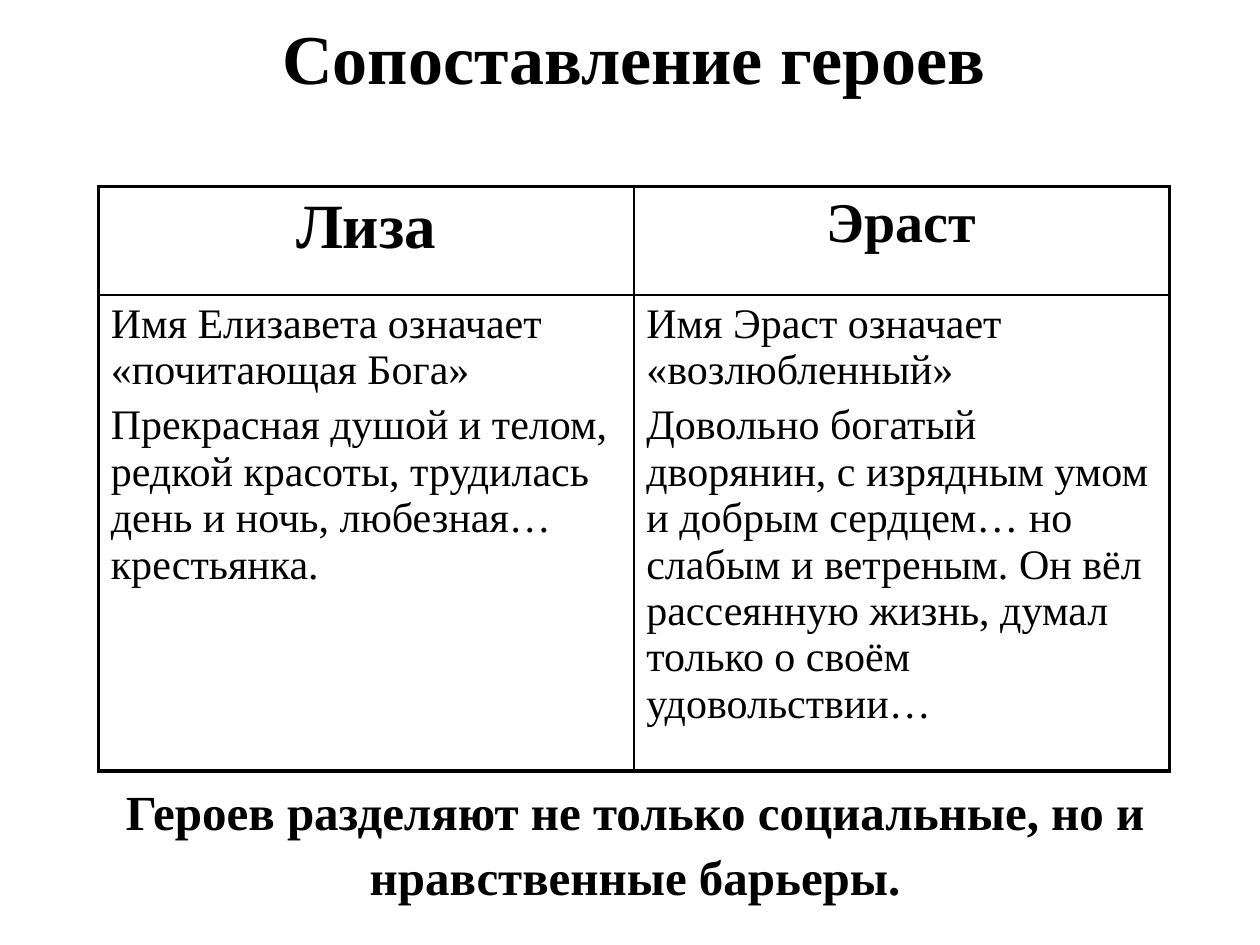
import pptx
import pptx.dml.color
import pptx.enum.text
import pptx.oxml
import pptx.oxml.ns
import pptx.util
from pptx.util import Inches

BLACK = pptx.dml.color.RGBColor(0, 0, 0)
WHITE = pptx.dml.color.RGBColor(255, 255, 255)
FONT = "Times New Roman"
CENTER = pptx.enum.text.PP_ALIGN.CENTER
LEFT = pptx.enum.text.PP_ALIGN.LEFT
THICK, THIN = 2.25, 1

# Each hero: name, size of the name, description paragraphs
HEROES = [
    ("Лиза", 36, [
        "Имя Елизавета означает «почитающая Бога»",
        "Прекрасная душой и телом, редкой красоты, трудилась день и ночь, "
        "любезная…крестьянка.",
    ]),
    ("Эраст", 32, [
        "Имя Эраст означает «возлюбленный»",
        "Довольно богатый дворянин, с изрядным умом и добрым сердцем… но "
        "слабым и ветреным. Он вёл рассеянную жизнь, думал только о своём "
        "удовольствии…",
    ]),
]


def write(frame, texts, size, bold, align):
    """Fill a text frame with one run per paragraph."""
    for index, text in enumerate(texts):
        para = frame.add_paragraph() if index else frame.paragraphs[0]
        para.alignment = align
        if index:
            para.space_before = pptx.util.Pt(size * 0.2)
        span = para.add_run()
        span.text = text
        span.font.name = FONT
        span.font.size = pptx.util.Pt(size)
        span.font.bold = bold
        span.font.color.rgb = BLACK


def set_borders(cell, widths):
    """Draw black cell borders; widths are in points, by side tag."""
    properties = cell._tc.get_or_add_tcPr()
    for index, (side, width) in enumerate(widths.items()):
        line = pptx.oxml.parse_xml(
            f'<a:{side} {pptx.oxml.ns.nsdecls("a")} w="{pptx.util.Pt(width)}">'
            f'<a:solidFill><a:srgbClr val="{BLACK}"/></a:solidFill></a:{side}>')
        properties.insert(index, line)


def add_heading(page, left, top, width, height, text, size, wrap):
    """Bold centred line of text."""
    box = page.shapes.add_textbox(left, top, width, height)
    frame = box.text_frame
    frame.word_wrap = wrap
    write(frame, [text], size, True, CENTER)
    frame.paragraphs[0].line_spacing = 1.1


def add_heroes_table(page, left, top, width, height):
    """Two heroes side by side: names above descriptions."""
    table = page.shapes.add_table(2, len(HEROES), left, top, width, height).table
    table.first_row = table.horz_banding = False
    table.rows[0].height = Inches(0.86)
    table.rows[1].height = height - Inches(0.86)
    last = len(HEROES) - 1
    for column, (name, name_size, description) in enumerate(HEROES):
        table.columns[column].width = width // len(HEROES)
        contents = [([name], name_size, True, CENTER),
                    (description, 24, False, LEFT)]
        for row, content in enumerate(contents):
            cell = table.cell(row, column)
            cell.fill.solid()
            cell.fill.fore_color.rgb = WHITE
            write(cell.text_frame, *content)
            # Thick outer frame, thin inner lines
            set_borders(cell, {
                "lnL": THICK if column == 0 else THIN,
                "lnR": THICK if column == last else THIN,
                "lnT": THICK if row == 0 else THIN,
                "lnB": THICK if row == 1 else THIN,
            })


def main():
    deck = pptx.Presentation()
    deck.slide_width, deck.slide_height = Inches(10), Inches(7.5)
    page = deck.slides.add_slide(deck.slide_layouts[6])
    add_heroes_table(page, Inches(0.78), Inches(1.48), Inches(8.5), Inches(4.64))
    # Conclusion below the table
    add_heading(page, Inches(0.59), Inches(6.11), Inches(8.9), Inches(1.04),
                "Героев разделяют не только социальные, но и нравственные барьеры.",
                28, True)
    # Slide title
    add_heading(page, Inches(2.11), Inches(0), Inches(5.84), Inches(0.77),
                "Сопоставление героев", 40, False)
    deck.save("out.pptx")


if __name__ == "__main__":
    main()
